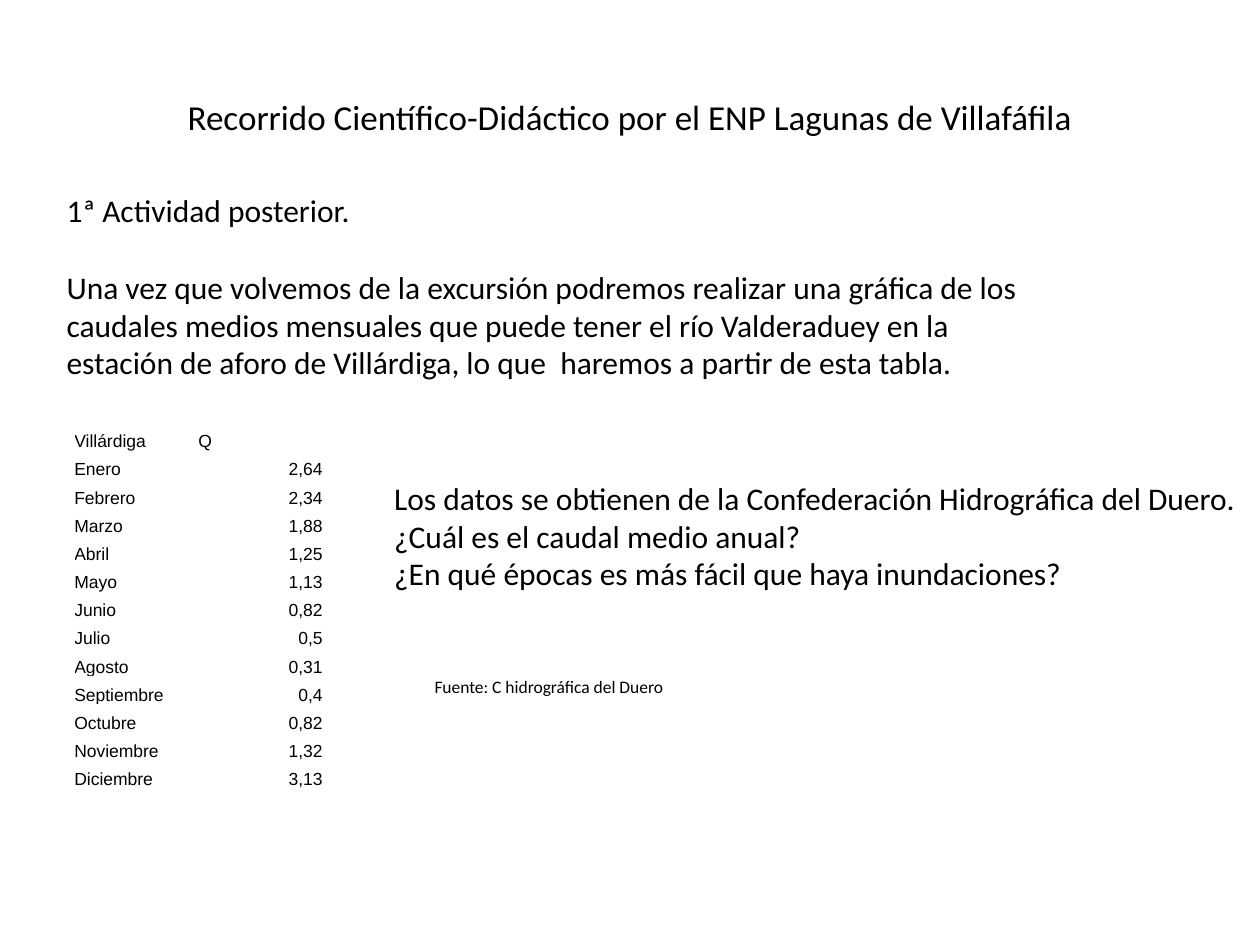
"""Build the slide on the monthly flow of the Valderaduey at Villárdiga."""
import pptx
import pptx.dml.color
import pptx.enum.text
import pptx.util

Inches, Pt = pptx.util.Inches, pptx.util.Pt
ALIGN, ANCHOR = pptx.enum.text.PP_ALIGN, pptx.enum.text.MSO_ANCHOR
BLACK = pptx.dml.color.RGBColor(0, 0, 0)

TITLE = ["Recorrido Científico-Didáctico por el ENP Lagunas de Villafáfila"]
ACTIVITY = [
    "1ª Actividad posterior.",
    "Una vez que volvemos de la excursión podremos realizar una gráfica de los "
    "caudales medios mensuales que puede tener el río Valderaduey en la estación "
    "de aforo de Villárdiga, lo que  haremos a partir de esta tabla.",
]
QUESTIONS = [
    "Los datos se obtienen de la Confederación Hidrográfica del Duero.",
    "¿Cuál es el caudal medio anual?",
    "¿En qué épocas es más fácil que haya inundaciones?",
]
SOURCE = ["Fuente: C hidrográfica del Duero"]
FLOWS = [
    ("Villárdiga", "Q"),
    ("Enero", "2,64"),
    ("Febrero", "2,34"),
    ("Marzo", "1,88"),
    ("Abril", "1,25"),
    ("Mayo", "1,13"),
    ("Junio", "0,82"),
    ("Julio", "0,5"),
    ("Agosto", "0,31"),
    ("Septiembre", "0,4"),
    ("Octubre", "0,82"),
    ("Noviembre", "1,32"),
    ("Diciembre", "3,13"),
]


def add_run(p, text, size, font="Calibri"):
    r = p.add_run()
    r.text = text
    r.font.name, r.font.size = font, Pt(size)
    r.font.color.rgb = BLACK


def add_text(s, box, lines, size, align=ALIGN.LEFT, anchor=ANCHOR.TOP, wrap=True, gap=0):
    tf = s.shapes.add_textbox(*map(Inches, box)).text_frame
    tf.word_wrap, tf.vertical_anchor = wrap, anchor
    for i, line in enumerate(lines):
        p = tf.add_paragraph() if i else tf.paragraphs[0]
        p.alignment = align
        if i and gap:
            p.space_before = Pt(gap)
        add_run(p, line, size)


def add_flow_table(s, left, top, width, height):
    box = map(Inches, (left, top, width, height))
    table = s.shapes.add_table(len(FLOWS), 2, *box).table
    table.first_row = table.horz_banding = False
    for row, values in zip(table.rows, FLOWS):
        row.height = Inches(height / len(FLOWS))
        for col, (cell, value) in enumerate(zip(row.cells, values)):
            cell.fill.background()
            cell.vertical_anchor = ANCHOR.BOTTOM
            cell.margin_left = cell.margin_right = 0
            cell.margin_top = cell.margin_bottom = 0
            p = cell.text_frame.paragraphs[0]
            number = col == 1 and values != FLOWS[0]
            p.alignment = ALIGN.RIGHT if number else ALIGN.LEFT
            add_run(p, value, 10, "Arial")


def main():
    prs = pptx.Presentation()
    prs.slide_width, prs.slide_height = Inches(10), Inches(7.5)
    s = prs.slides.add_slide(prs.slide_layouts[6])
    add_text(s, (0.5, 0.3, 9, 1.25), TITLE, 20, ALIGN.CENTER, ANCHOR.MIDDLE)
    add_text(s, (0.43, 1.47, 7.91, 1.92), ACTIVITY, 18, gap=22)
    add_flow_table(s, 0.59, 3.36, 1.97, 2.91)
    add_text(s, (3.03, 3.75, 6.97, 1.01), QUESTIONS, 18, wrap=False)
    add_text(s, (3.35, 5.32, 2.28, 0.27), SOURCE, 10)
    prs.save("out.pptx")


if __name__ == "__main__":
    main()
